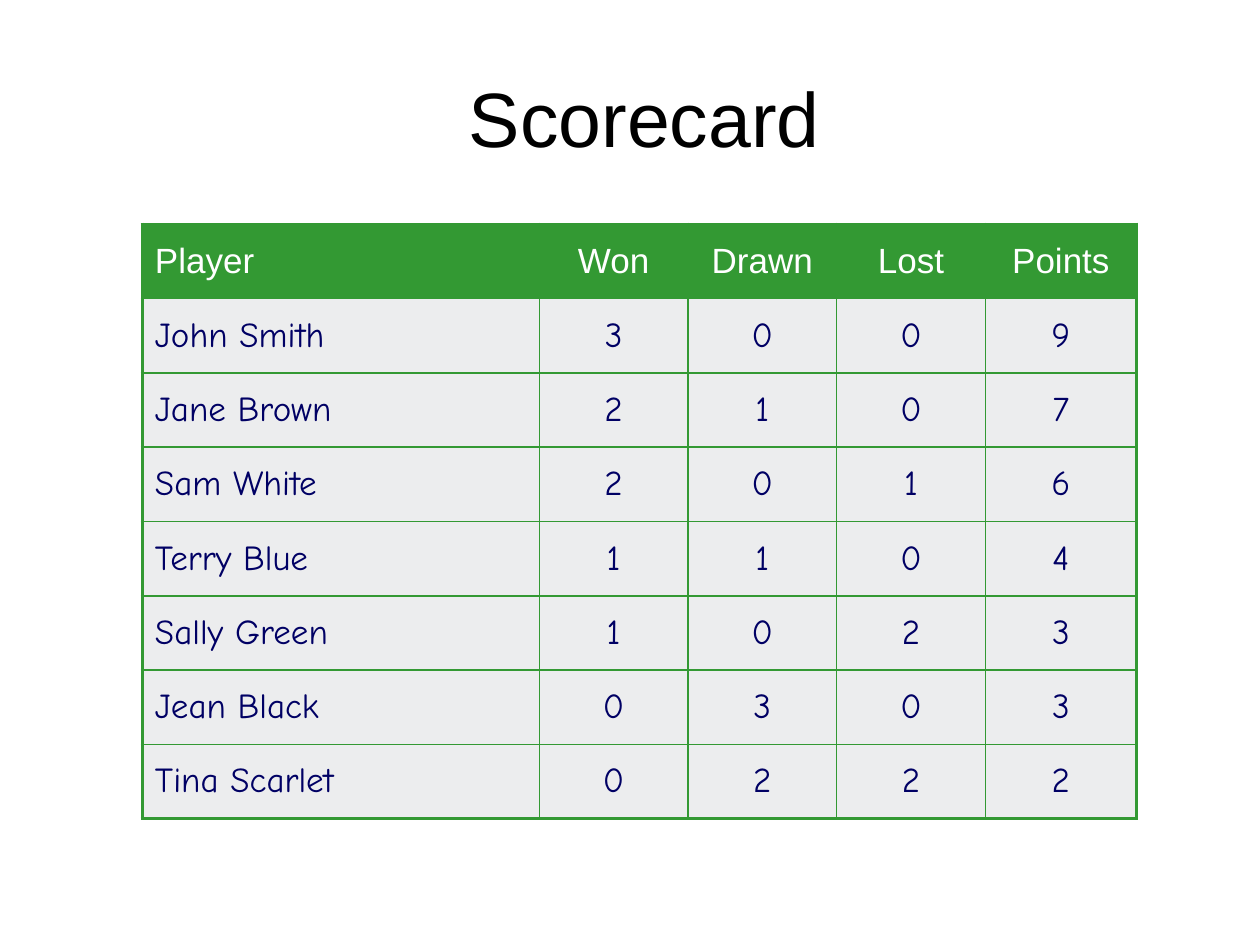
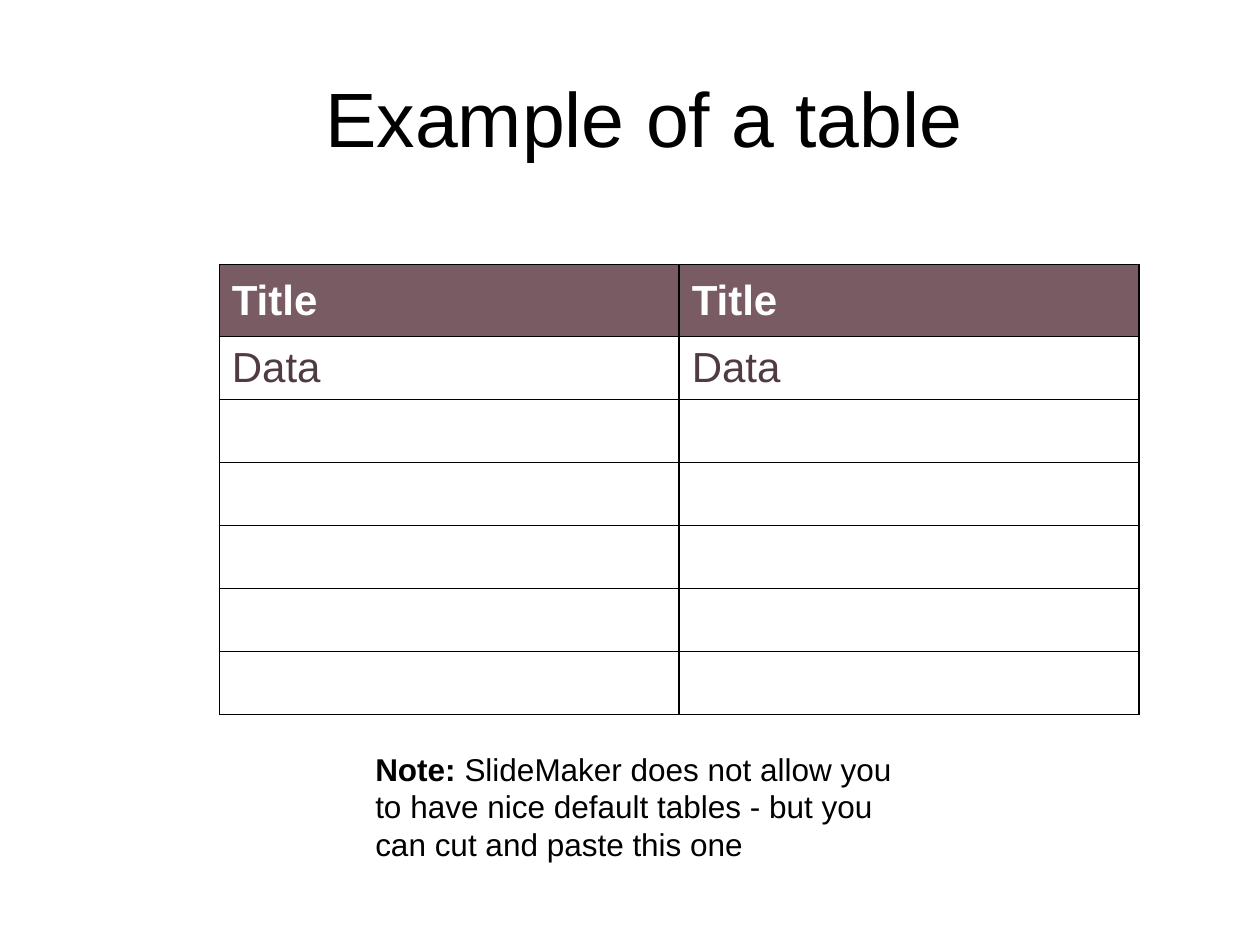
from dataclasses import dataclass

from lxml.etree import SubElement
from pptx import Presentation
from pptx.dml.color import RGBColor
from pptx.enum.text import MSO_ANCHOR, PP_ALIGN
from pptx.oxml.ns import qn
from pptx.util import Inches, Pt


@dataclass(frozen=True)
class Theme:
    black: str = "000000"
    white: str = "FFFFFF"
    green: str = "339933"
    pale_grey: str = "ECEDEE"
    navy: str = "000064"
    plum: str = "795B64"
    dark_plum: str = "4F3B41"
    font: str = "Arial"
    score_font: str = "Comic Neue"
    title_size: int = 44
    score_size: int = 20
    example_size: int = 24
    note_size: int = 18
    thin_line: float = 1
    frame_line: float = 2.25


@dataclass(frozen=True)
class CellStyle:
    size: int
    color: str
    font: str = "Arial"
    bold: bool = False
    fill: str = ""


THEME = Theme()

SCORES = [
    ("Player", "Won", "Drawn", "Lost", "Points"),
    ("John Smith", 3, 0, 0, 9),
    ("Jane Brown", 2, 1, 0, 7),
    ("Sam White", 2, 0, 1, 6),
    ("Terry Blue", 1, 1, 0, 4),
    ("Sally Green", 1, 0, 2, 3),
    ("Jean Black", 0, 3, 0, 3),
    ("Tina Scarlet", 0, 2, 2, 2),
]
EXAMPLE = [("Title", "Title"), ("Data", "Data")] + [("", "")] * 5


def format_run(run, size, color, font=THEME.font, bold=False):
    run.font.size = Pt(size)
    run.font.color.rgb = RGBColor.from_string(color)
    run.font.name = font
    run.font.bold = bold


def add_text_box(slide, left, top, width, height):
    box = slide.shapes.add_textbox(Inches(left), Inches(top), Inches(width), Inches(height))
    box.text_frame.word_wrap = True
    return box.text_frame


def add_titled_slide(deck, title):
    slide = deck.slides.add_slide(deck.slide_layouts[6])
    frame = add_text_box(slide, 1.06, 0.3, 8.11, 1.25)
    frame.vertical_anchor = MSO_ANCHOR.MIDDLE
    frame.text = title
    para = frame.paragraphs[0]
    para.alignment = PP_ALIGN.CENTER
    format_run(para.runs[0], THEME.title_size, THEME.black)
    return slide


def add_note(slide, label, message):
    frame = add_text_box(slide, 2.88, 5.9, 4.49, 1)
    para = frame.paragraphs[0]
    for text, bold in ((label, True), (message, False)):
        span = para.add_run()
        span.text = text
        format_run(span, THEME.note_size, THEME.black, bold=bold)


def set_borders(cell, color, widths):
    """Draw the left, right, top and bottom borders, with widths in points."""
    properties = cell._tc.get_or_add_tcPr()
    for side, width in zip("LRTB", widths):
        line = SubElement(properties, qn(f"a:ln{side}"), w=str(Pt(width)))
        fill = SubElement(line, qn("a:solidFill"))
        SubElement(fill, qn("a:srgbClr"), val=color)


def fill_cell(cell, text, style, alignment):
    if style.fill:
        cell.fill.solid()
        cell.fill.fore_color.rgb = RGBColor.from_string(style.fill)
    else:
        cell.fill.background()
    cell.vertical_anchor = MSO_ANCHOR.MIDDLE
    cell.text = str(text)
    para = cell.text_frame.paragraphs[0]
    para.alignment = alignment
    for run in para.runs:
        format_run(run, style.size, style.color, style.font, style.bold)


def add_grid(slide, rows, position, column_widths, row_heights, header, body,
             line_color, frame_line, value_alignment):
    """Add a table with a header row and a frame of its own line width."""
    left, top = position
    table = slide.shapes.add_table(
        len(rows), len(column_widths), Inches(left), Inches(top),
        Inches(sum(column_widths)), Inches(sum(row_heights))).table
    table.horz_banding = False
    for column, width in zip(table.columns, column_widths):
        column.width = Inches(width)
    for row, height in zip(table.rows, row_heights):
        row.height = Inches(height)
    last_row, last_column = len(rows) - 1, len(column_widths) - 1
    for r, values in enumerate(rows):
        for c, value in enumerate(values):
            cell = table.cell(r, c)
            on_frame = (c == 0, c == last_column, r == 0, r == last_row)
            set_borders(cell, line_color,
                        [frame_line if edge else THEME.thin_line for edge in on_frame])
            fill_cell(cell, value, body if r else header,
                      value_alignment if c else PP_ALIGN.LEFT)


def add_scorecard(deck):
    slide = add_titled_slide(deck, "Scorecard")
    header = CellStyle(THEME.score_size, THEME.white, fill=THEME.green)
    body = CellStyle(THEME.score_size, THEME.navy, THEME.score_font, fill=THEME.pale_grey)
    add_grid(slide, SCORES, (1.13, 1.78), [3.15] + [1.18] * 3 + [1.2], [0.59] * len(SCORES),
             header, body, THEME.green, THEME.frame_line, PP_ALIGN.CENTER)


def add_example(deck):
    slide = add_titled_slide(deck, "Example of a table")
    header = CellStyle(THEME.example_size, THEME.white, bold=True, fill=THEME.plum)
    body = CellStyle(THEME.example_size, THEME.dark_plum)
    add_grid(slide, EXAMPLE, (1.74, 2.1), [3.65] * 2, [0.57] + [0.5] * (len(EXAMPLE) - 1),
             header, body, THEME.black, THEME.thin_line, PP_ALIGN.LEFT)
    add_note(slide, "Note: ", "SlideMaker does not allow you to have nice default tables"
                              " - but you can cut and paste this one")


def main():
    deck = Presentation()
    deck.slide_width, deck.slide_height = Inches(10), Inches(7.5)
    add_scorecard(deck)
    add_example(deck)
    deck.save("out.pptx")


if __name__ == "__main__":
    main()
